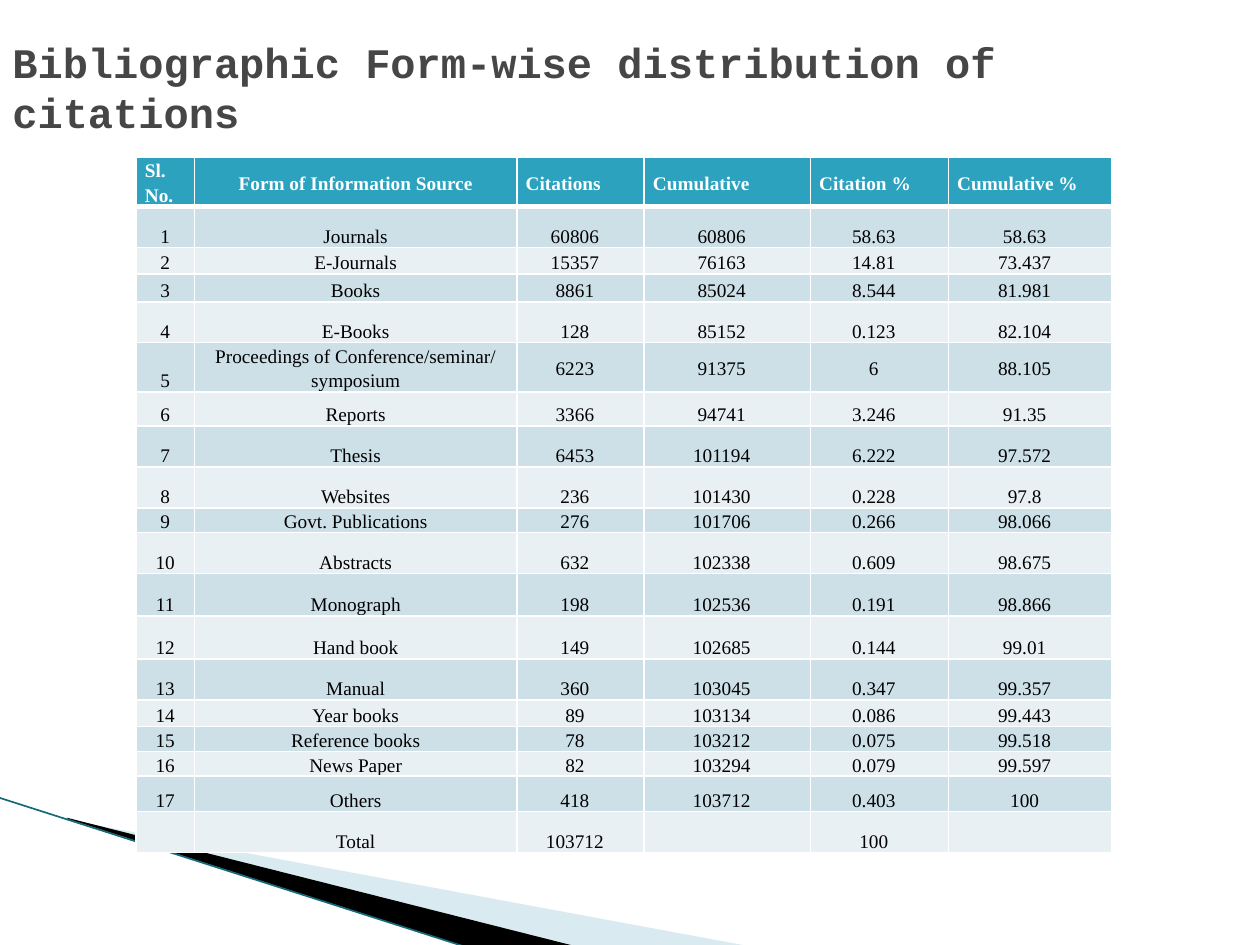
"""Build a slide with a table of citations by bibliographic form."""
import lxml.etree
import pptx
import pptx.dml.color
import pptx.enum.shapes
import pptx.enum.text
import pptx.oxml.ns
import pptx.util

WHITE = pptx.dml.color.RGBColor(0xFF, 0xFF, 0xFF)
BLACK = pptx.dml.color.RGBColor(0x00, 0x00, 0x00)
TITLE_GRAY = pptx.dml.color.RGBColor(0x46, 0x46, 0x46)
HEADER_TEAL = pptx.dml.color.RGBColor(0x2D, 0xA2, 0xBF)
BAND_DARK = pptx.dml.color.RGBColor(0xCD, 0xE0, 0xE8)
BAND_LIGHT = pptx.dml.color.RGBColor(0xE8, 0xF0, 0xF4)
SWOOSH_BLUE = pptx.dml.color.RGBColor(0xA0, 0xCB, 0xDC)
EDGE_TEAL = pptx.dml.color.RGBColor(0x16, 0x69, 0x7A)

HEADERS = ["Sl. No.", "Form of Information Source", "Citations",
           "Cumulative", "Citation %", "Cumulative %"]
SOURCES = [
    ("Journals", "60806", "60806", "58.63", "58.63"),
    ("E-Journals", "15357", "76163", "14.81", "73.437"),
    ("Books", "8861", "85024", "8.544", "81.981"),
    ("E-Books", "128", "85152", "0.123", "82.104"),
    ("Proceedings of Conference/seminar/\nsymposium",
     "6223", "91375", "6", "88.105"),
    ("Reports", "3366", "94741", "3.246", "91.35"),
    ("Thesis", "6453", "101194", "6.222", "97.572"),
    ("Websites", "236", "101430", "0.228", "97.8"),
    ("Govt. Publications", "276", "101706", "0.266", "98.066"),
    ("Abstracts", "632", "102338", "0.609", "98.675"),
    ("Monograph", "198", "102536", "0.191", "98.866"),
    ("Hand book", "149", "102685", "0.144", "99.01"),
    ("Manual", "360", "103045", "0.347", "99.357"),
    ("Year books", "89", "103134", "0.086", "99.443"),
    ("Reference books", "78", "103212", "0.075", "99.518"),
    ("News Paper", "82", "103294", "0.079", "99.597"),
    ("Others", "418", "103712", "0.403", "100"),
]
TOTAL = ["", "Total", "103712", "", "100", ""]
COLUMN_WIDTHS = [46.3, 256, 101, 132, 109.5, 130]
ROW_HEIGHTS = [38.7, 32.5, 21, 22, 32.5, 39, 27, 32.5, 32.5, 19,
               32.5, 34, 34, 32.5, 21, 20, 19, 28, 32.5]

deck = pptx.Presentation()
deck.slide_width = pptx.util.Inches(10)
deck.slide_height = pptx.util.Inches(7.5)
UNIT = deck.slide_width // 1000
page = deck.slides.add_slide(deck.slide_layouts[6])

swooshes = [
    ([(55, 651), (595, 751), (456, 751), (55, 650)],
     (78, 547, 416, 158), SWOOSH_BLUE, 40),
    ([(53, 649), (457, 751), (372, 752), (54, 650)],
     (-6, 633, 416, 92), BLACK, 100),
]
for points, (left, top, width, height), color, opacity in swooshes:
    builder = page.shapes.build_freeform(*points[0], scale=UNIT)
    builder.add_line_segments(points[1:], close=True)
    swoosh = builder.convert_to_shape()
    shift_x = min(x for x, y in points) - left
    shift_y = min(y for x, y in points) - top
    outline = swoosh._element.find(".//" + pptx.oxml.ns.qn("a:path"))
    outline.set("w", str(width))
    outline.set("h", str(height))
    for point in outline.iter(pptx.oxml.ns.qn("a:pt")):
        point.set("x", str(int(point.get("x")) + shift_x))
        point.set("y", str(int(point.get("y")) + shift_y))
    swoosh.left, swoosh.top = left * UNIT, top * UNIT
    swoosh.width, swoosh.height = width * UNIT, height * UNIT
    swoosh.shadow.inherit = False
    swoosh.fill.solid()
    swoosh.fill.fore_color.rgb = color
    swoosh.line.fill.background()
    if opacity < 100:
        tint = swoosh.fill._xPr.find(".//" + pptx.oxml.ns.qn("a:srgbClr"))
        lxml.etree.SubElement(tint, pptx.oxml.ns.qn("a:alpha"),
                              val=str(opacity * 1000))

edge = page.shapes.add_connector(
    pptx.enum.shapes.MSO_CONNECTOR.STRAIGHT,
    -UNIT, 633 * UNIT, 371 * UNIT, 752 * UNIT)
edge.line.color.rgb = EDGE_TEAL
edge.line.width = pptx.util.Pt(0.95)
lxml.etree.SubElement(edge._element.spPr, pptx.oxml.ns.qn("a:effectLst"))

rows = [HEADERS]
rows += [[str(number), *source] for number, source in enumerate(SOURCES, 1)]
rows.append(TOTAL)
table = page.shapes.add_table(
    len(rows), len(HEADERS), 108 * UNIT, 125 * UNIT,
    int(sum(COLUMN_WIDTHS) * UNIT), int(sum(ROW_HEIGHTS) * UNIT)).table
for column, width in zip(table.columns, COLUMN_WIDTHS):
    column.width = int(width * UNIT)
for row, height in zip(table.rows, ROW_HEIGHTS):
    row.height = int(height * UNIT)

for row_index, values in enumerate(rows):
    is_header = row_index == 0
    for column_index, value in enumerate(values):
        cell = table.cell(row_index, column_index)
        is_number = column_index > 1 and not is_header
        is_middle = is_header or (is_number and "\n" in values[1])
        cell.text = value
        cell.margin_left = 7 * UNIT
        cell.margin_right = (16 if is_number else 7) * UNIT
        cell.margin_top = cell.margin_bottom = 0
        cell.vertical_anchor = (pptx.enum.text.MSO_ANCHOR.MIDDLE if is_middle
                                else pptx.enum.text.MSO_ANCHOR.BOTTOM)
        for side in ("lnL", "lnR", "lnT", "lnB"):
            thick = (is_header and side == "lnB") or (row_index == 1 and side == "lnT")
            border = lxml.etree.SubElement(
                cell._tc.get_or_add_tcPr(), pptx.oxml.ns.qn("a:" + side),
                w=str(pptx.util.Pt(3 if thick else 1)))
            solid = lxml.etree.SubElement(border, pptx.oxml.ns.qn("a:solidFill"))
            lxml.etree.SubElement(solid, pptx.oxml.ns.qn("a:srgbClr"), val=str(WHITE))
        cell.fill.solid()
        cell.fill.fore_color.rgb = (HEADER_TEAL if is_header else
                                    BAND_DARK if row_index % 2 else BAND_LIGHT)
        for para in cell.text_frame.paragraphs:
            para.alignment = (pptx.enum.text.PP_ALIGN.JUSTIFY
                              if is_header and column_index != 1
                              else pptx.enum.text.PP_ALIGN.CENTER)
            para.line_spacing = 1.15
            para.font.name = "Times New Roman"
            para.font.size = pptx.util.Pt(11)
            para.font.bold = is_header
            para.font.color.rgb = WHITE if is_header else BLACK

box = page.shapes.add_textbox(0, 30 * UNIT, 950 * UNIT, 78 * UNIT)
box.text_frame.word_wrap = True
box.text_frame.vertical_anchor = pptx.enum.text.MSO_ANCHOR.MIDDLE
para = box.text_frame.paragraphs[0]
para.text = "Bibliographic Form-wise distribution of citations"
para.font.name = "Courier New"
para.font.size = pptx.util.Pt(24)
para.font.bold = True
para.font.color.rgb = TITLE_GRAY

deck.save("out.pptx")
